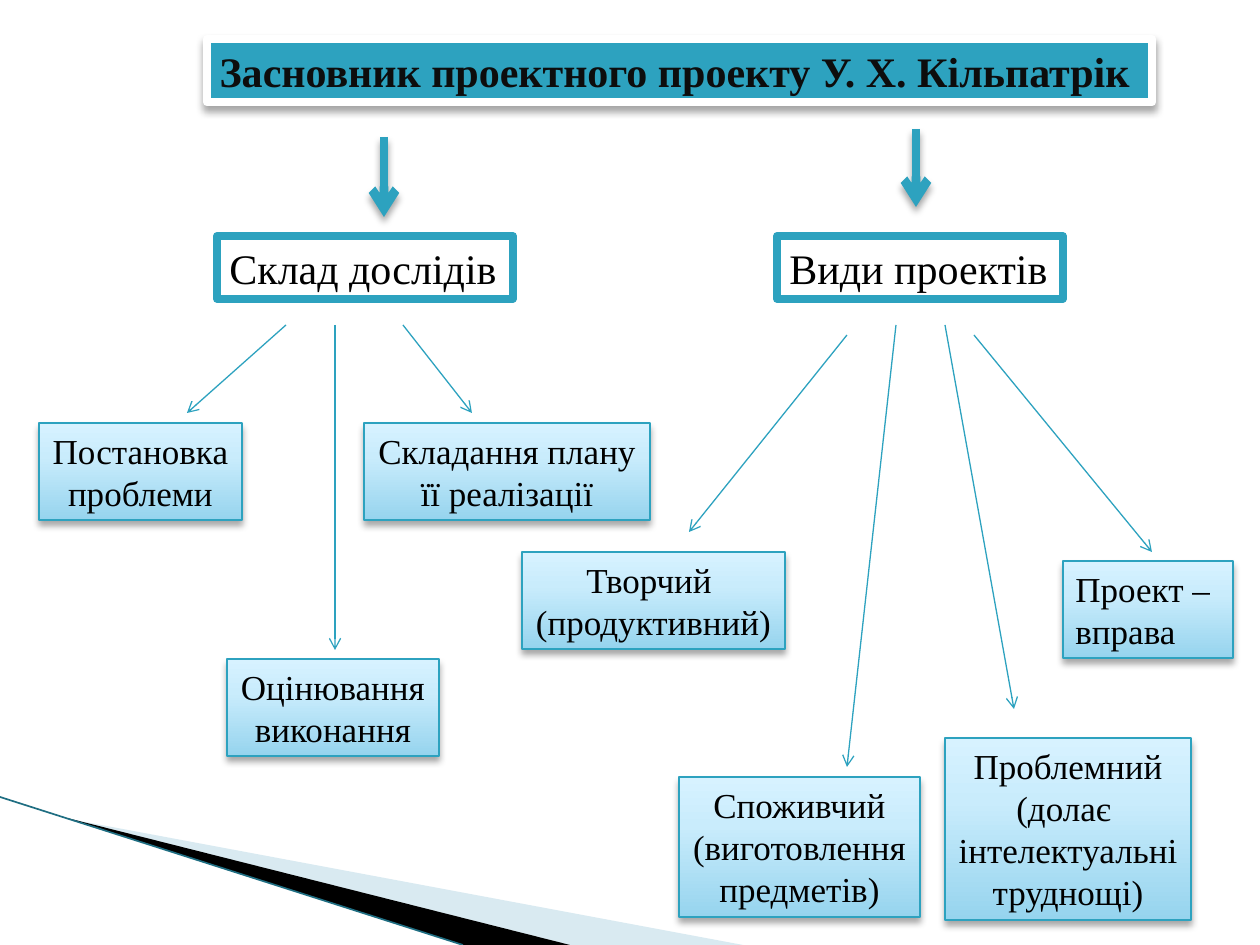
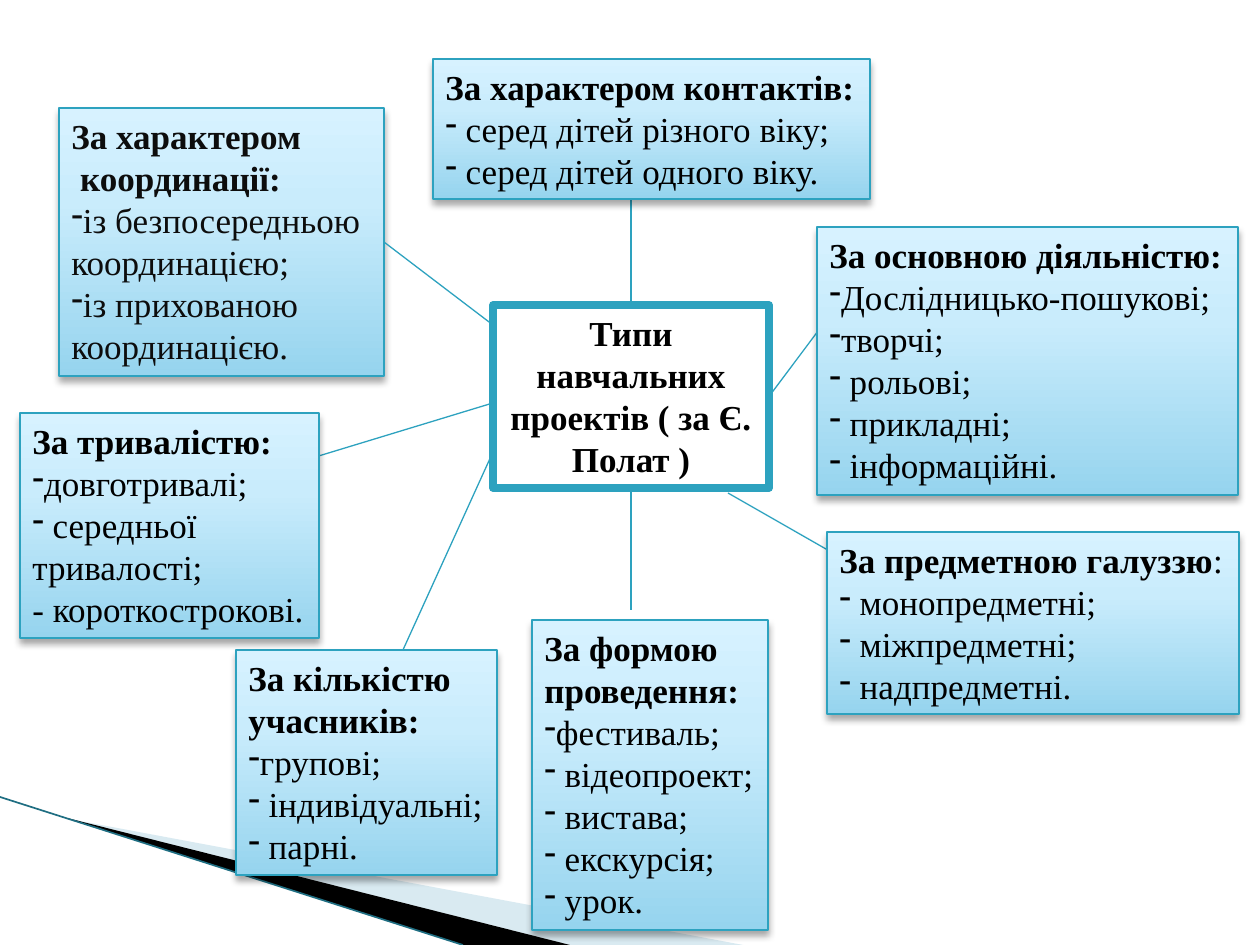
from copy import deepcopy

from lxml import etree
from pptx import Presentation
from pptx import util as u
from pptx.dml.color import RGBColor
from pptx.enum import shapes, text
from pptx.oxml.ns import qn

PX = u.Inches(1) / 126
FONT = "Times New Roman"
TEAL = RGBColor(0x2D, 0xA2, 0xBF)
DARK_TEAL = RGBColor(0x1F, 0x6E, 0x82)
PALE = RGBColor(0xD9, 0xEA, 0xF1)
WHITE = RGBColor(0xFF, 0xFF, 0xFF)
BLACK = RGBColor(0, 0, 0)
INK = RGBColor(0x0D, 0x0D, 0x0D)
GRADIENT = [
    (0, RGBColor(0x96, 0xD4, 0xEE)),
    (0.65, RGBColor(0xC9, 0xEC, 0xFC)),
    (1, RGBColor(0xD7, 0xF2, 0xFF)),
]
LEFT, CENTER = text.PP_ALIGN.LEFT, text.PP_ALIGN.CENTER

WEDGES = [
    (PALE, [(69, 819), (743, 945), (570, 945)]),
    (BLACK, [(67, 818), (570, 945), (463, 945)]),
]
WEDGE_EDGE = (0, 797, 463, 945)

FOUNDER = "Засновник проектного проекту У. Х. Кільпатрік"
FOUNDER_BOX = (207, 39, 945, 63)
BIG_ARROWS = [(384, 137, 384, 217), (916, 129, 916, 207)]
BRANCHES = [
    ("Склад дослідів", (217, 236, 296, 63)),
    ("Види проектів", (777, 236, 286, 63)),
]
BRANCH_ARROWS = [
    (286, 325, 187, 413), (335, 325, 335, 650), (403, 325, 472, 413),
    (847, 335, 689, 532), (896, 325, 847, 767), (945, 325, 1014, 709),
    (974, 335, 1152, 552),
]
LEAVES = [
    (39, 423, 203, CENTER, ["Постановка", "проблеми"]),
    (227, 659, 212, CENTER, ["Оцінювання", "виконання"]),
    (364, 423, 286, CENTER, ["Складання плану", "її реалізації"]),
    (522, 552, 263, CENTER, ["Творчий ", "(продуктивний)"]),
    (679, 777, 241, CENTER, ["Споживчий", "(виготовлення", "предметів)"]),
    (945, 738, 246, CENTER,
     ["Проблемний", "(долає ", "інтелектуальні", "труднощі)"]),
    (1063, 561, 170, LEFT, ["Проект –", "вправа"]),
]

TYPES = "Типи навчальних проектів ( за Є. Полат )"
TYPES_BOX = (493, 305, 276, 183)
TOP, BOTTOM, RIGHT = 0, 2, 3
SPOKES = [
    ((631, 305, 631, 188), TOP),
    ((769, 397, 896, 227), RIGHT),
    ((728, 493, 847, 561), None),
    ((631, 488, 631, 610), BOTTOM),
    ((493, 452, 403, 650), None),
    ((493, 403, 197, 493), None),
]
COORDINATION_SPOKE = (493, 325, 384, 242)
BULLET = "•"
GROUPS = [
    (433, 59, 437, BLACK, ["За характером контактів:"],
     ["• серед дітей різного віку;", "• серед дітей одного віку."]),
    (817, 227, 421, BLACK, ["За основною діяльністю:"],
     ["•Дослідницько-пошукові;", "•творчі;", "• рольові;", "• прикладні;",
      "• інформаційні."]),
    (827, 532, 412, BLACK, ["За предметною галуззю|:"],
     ["• монопредметні;", "• міжпредметні;", "• надпредметні."]),
    (532, 620, 236, BLACK, ["За формою", "проведення:"],
     ["•фестиваль;", "• відеопроект;", "• вистава;", "• екскурсія;",
      "• урок."]),
    (236, 650, 261, BLACK, ["За кількістю", "учасників:"],
     ["•групові;", "• індивідуальні;", "• парні."]),
    (20, 413, 299, BLACK, ["За тривалістю:"],
     ["•довготривалі;", "• середньої", "тривалості;", "- короткострокові."]),
    (59, 108, 325, INK, ["За характером", " координації:"],
     ["•із безпосередньою", "координацією;", "•із прихованою",
      "координацією."]),
]


def emu(*lengths):
    return [round(n * PX) for n in lengths]


def add_shadow(sp):
    sp_pr = sp._element.spPr
    effects = sp_pr.find(qn("a:effectLst"))
    if effects is None:
        effects = etree.SubElement(sp_pr, qn("a:effectLst"))
    shadow = etree.SubElement(effects, qn("a:outerShdw"), blurRad="50800",
                              dist="38100", dir="5400000", rotWithShape="0")
    color = etree.SubElement(shadow, qn("a:srgbClr"), val="000000")
    etree.SubElement(color, qn("a:alpha"), val="35000")


def add_line(slide, ends, width=0.75, color=TEAL, arrow=False):
    line = slide.shapes.add_connector(shapes.MSO_CONNECTOR.STRAIGHT, *emu(*ends))
    line.line.color.rgb = color
    line.line.width = u.Pt(width)
    if arrow:
        ln = line._element.spPr.find(qn("a:ln"))
        etree.SubElement(ln, qn("a:tailEnd"), type="arrow")
    etree.SubElement(line._element.spPr, qn("a:effectLst"))
    return line


def write(sp, lines, size, align=LEFT, color=BLACK, bold_lines=0, wrap=False):
    tf = sp.text_frame
    tf.auto_size = text.MSO_AUTO_SIZE.NONE
    tf.word_wrap = wrap
    tf.vertical_anchor = text.MSO_ANCHOR.TOP
    for i, line in enumerate(lines):
        p = tf.add_paragraph() if i else tf.paragraphs[0]
        p.alignment = align
        if line.startswith(BULLET):
            p_pr = p._p.get_or_add_pPr()
            p_pr.set("marL", "0")
            p_pr.set("indent", "0")
            etree.SubElement(p_pr, qn("a:buChar"), char="-")
        p.font.name = FONT
        p.font.size = u.Pt(size)
        p.font.bold = i < bold_lines
        p.font.color.rgb = color
        strong, *plain = line.removeprefix(BULLET).split("|")
        p.add_run().text = strong
        for part in plain:
            r = p.add_run()
            r.text = part
            r.font.bold = False


def paint(sp, fill, line, width):
    sp.fill.solid()
    sp.fill.fore_color.rgb = fill
    sp.line.color.rgb = line
    sp.line.width = u.Pt(width)


def place_title(slide, box):
    title = slide.shapes.title
    title.left, title.top, title.width, title.height = emu(*box)
    return title


def add_card(slide, x, y, width, lines, **style):
    height = round(42.6 * len(lines) + 12)
    sp = slide.shapes.add_textbox(*emu(x, y, width, height))
    fill = sp.fill
    fill.gradient()
    fill.gradient_angle = 90
    stops = sp._element.spPr.find(".//" + qn("a:gsLst"))
    stops.append(deepcopy(stops[0]))
    for stop, (position, color) in zip(fill.gradient_stops, GRADIENT):
        stop.position = position
        stop.color.rgb = color
    sp.line.color.rgb = TEAL
    sp.line.width = u.Pt(0.75)
    add_shadow(sp)
    write(sp, lines, 20, **style)
    return sp


def new_slide(prs):
    slide = prs.slides.add_slide(prs.slide_layouts[5])
    for color, (start, *rest) in WEDGES:
        outline = slide.shapes.build_freeform(*start, scale=PX)
        outline.add_line_segments(rest)
        sp = outline.convert_to_shape()
        sp.shadow.inherit = False
        sp.fill.solid()
        sp.fill.fore_color.rgb = color
        sp.line.fill.background()
    add_line(slide, WEDGE_EDGE, 0.95, DARK_TEAL)
    return slide


def build_founder(prs):
    slide = new_slide(prs)
    title = place_title(slide, FOUNDER_BOX)
    paint(title, TEAL, WHITE, 5)
    add_shadow(title)
    write(title, [FOUNDER], 24, color=INK, bold_lines=1)
    for ends in BIG_ARROWS:
        add_shadow(add_line(slide, ends, 5, arrow=True))
    for name, box in BRANCHES:
        sp = slide.shapes.add_textbox(*emu(*box))
        paint(sp, WHITE, TEAL, 4.33)
        write(sp, [name], 24)
    for ends in BRANCH_ARROWS:
        add_line(slide, ends, arrow=True)
    for x, y, width, align, lines in LEAVES:
        add_card(slide, x, y, width, lines, align=align)


def build_types(prs):
    slide = new_slide(prs)
    hub = place_title(slide, TYPES_BOX)
    paint(hub, WHITE, TEAL, 4.33)
    write(hub, [TYPES], 20, CENTER, bold_lines=1, wrap=True)
    for ends, side in SPOKES:
        line = add_line(slide, ends)
        if side is not None:
            line.begin_connect(hub, side)
    for x, y, width, color, heading, items in GROUPS:
        card = add_card(slide, x, y, width, heading + items, color=color,
                        bold_lines=len(heading))
    add_line(slide, COORDINATION_SPOKE).end_connect(card, RIGHT)


def main():
    prs = Presentation()
    prs.slide_width, prs.slide_height = emu(1260, 945)
    build_founder(prs)
    build_types(prs)
    prs.save("out.pptx")


if __name__ == "__main__":
    main()
